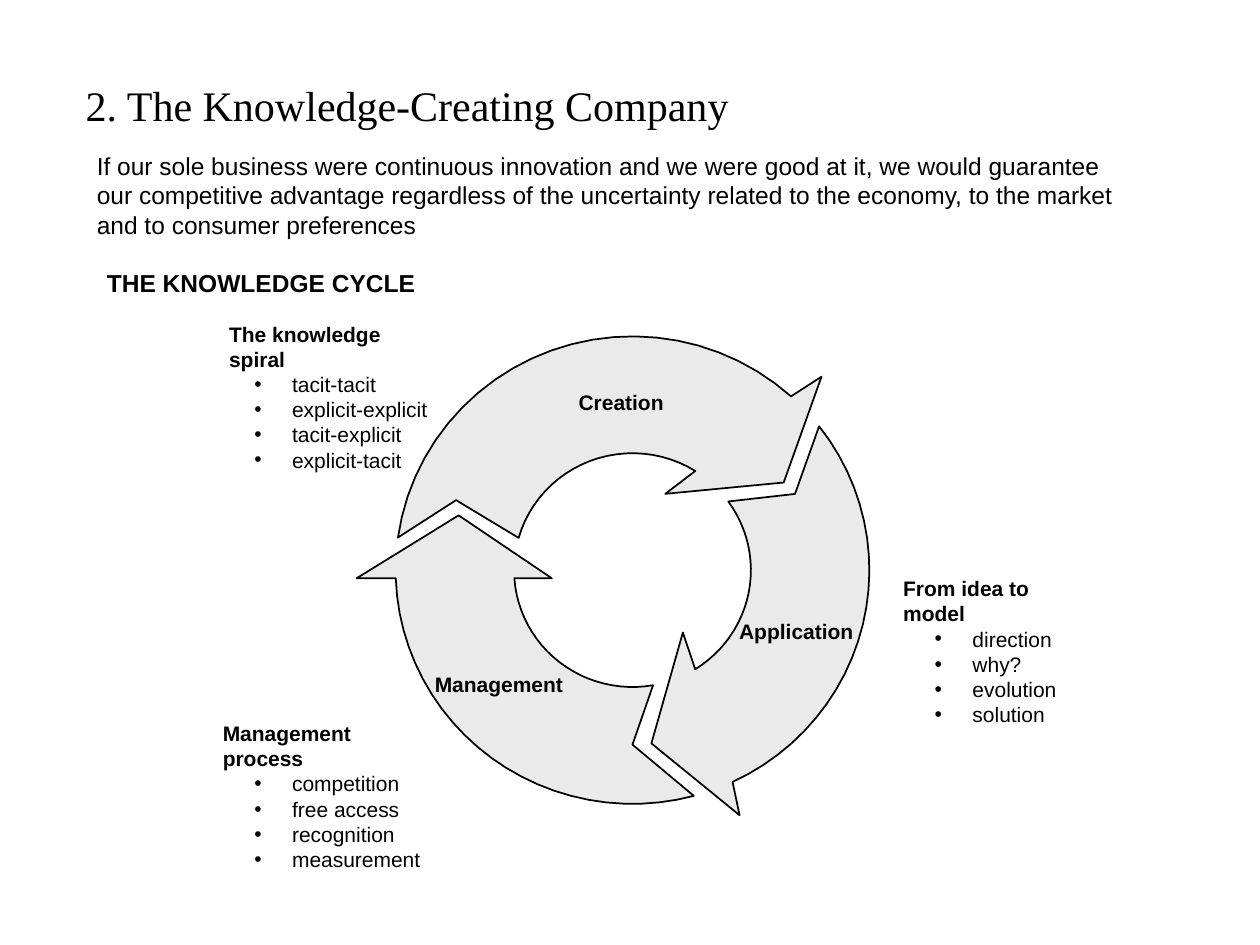
from math import cos, radians, sin

from lxml.etree import SubElement
from pptx import Presentation
from pptx.dml.color import RGBColor
from pptx.enum.text import MSO_ANCHOR as Anchor, MSO_AUTO_SIZE as AutoSize, PP_ALIGN as Align
from pptx.oxml.ns import qn
from pptx.util import Pt

PX = 9144
COLORS = {"ink": "000000", "arrow": "EAEAEA"}
CYCLE_BOX = (314, 267, 376, 371)
INNER_RATIO = 0.5
ARC_STEPS = 24

ARROWS = [
    dict(outer=(312, 188), notch=(48, 130), inner=(196, 302),
         head=[(214, 125), (308, 116), (338, 32)]),
    dict(outer=(178, 75), notch=(188, 324), inner=(80, 176),
         head=[(124, 192), (50, 142), (-31, 192)]),
    dict(outer=(65, -38), notch=(317, 125), inner=(-36, 58),
         head=[(228, 235), (203, 323), (273, 380)]),
]
LABELS = [
    ("Creation", (70, 42, 218, 20)),
    ("Application", (269, 224, 98, 20)),
    ("Management", (28, 266, 108, 20)),
]
LISTS = [
    ((167, 250, 194, 110), "The knowledge spiral", 5,
     ["tacit-tacit", "explicit-explicit", "tacit-explicit", "explicit-tacit"]),
    ((707, 452, 173, 110), "From idea to model", 0,
     ["direction", "why?", "evolution", "solution"]),
    ((167, 567, 190, 110), "Management process", 0,
     ["competition", "free access", "recognition", "measurement"]),
]
INTRO = (
    "If our sole business were continuous innovation and we were good at it, "
    "we would guarantee our competitive advantage regardless of the uncertainty "
    "related to the economy, to the market and to consumer preferences"
)


def rgb(name):
    """Return a named colour."""
    return RGBColor.from_string(COLORS[name])


def place(sp, box):
    """Move a shape to a box in px."""
    sp.left, sp.top, sp.width, sp.height = (v * PX for v in box)


def add_run(p, text, size, bold=False, font="Arial"):
    """Add a formatted run to a paragraph."""
    r = p.add_run()
    r.text = text
    r.font.name, r.font.size, r.font.bold = font, Pt(size), bold
    r.font.color.rgb = rgb("ink")


def add_text_frame(s, box, wrap=True):
    """Add a text box and return its frame."""
    tf = s.shapes.add_textbox(*(v * PX for v in box)).text_frame
    tf.word_wrap = wrap
    return tf


def set_indent(p, left, first=0):
    """Set the left margin and first-line indent of a paragraph."""
    ppr = p._p.get_or_add_pPr()
    ppr.set("marL", str(left * PX))
    ppr.set("indent", str(first * PX))
    return ppr


def set_title(s, box, text):
    """Format and fill the title placeholder."""
    sp = s.shapes.title
    place(sp, box)
    tf = sp.text_frame
    tf.auto_size, tf.word_wrap = AutoSize.NONE, False
    tf.vertical_anchor = Anchor.TOP
    p = tf.paragraphs[0]
    p.alignment = Align.LEFT
    add_run(p, text, 24, font="Times New Roman")


def arc(rx, ry, center, angles):
    """Return points on an elliptical arc between two angles in degrees."""
    start, end = angles
    turns = [radians(start + (end - start) * i / ARC_STEPS) for i in range(ARC_STEPS + 1)]
    return [(center[0] + rx * cos(t), center[1] + ry * sin(t)) for t in turns]


def add_arrow(s, box, outer, notch, inner, head):
    """Draw one curved arrow of the cycle inside its box."""
    x, y, w, h = box
    rx, ry = w / 2, h / 2
    center = (rx, ry)
    points = arc(rx, ry, center, outer) + [notch]
    points += arc(rx * INNER_RATIO, ry * INNER_RATIO, center, inner) + head
    points = [((x + dx) * PX, (y + dy) * PX) for dx, dy in points]
    builder = s.shapes.build_freeform(*points[0])
    builder.add_line_segments(points[1:], close=True)
    sp = builder.convert_to_shape()
    sp.shadow.inherit = False
    sp.fill.solid()
    sp.fill.fore_color.rgb = rgb("arrow")
    sp.line.color.rgb = rgb("ink")
    sp.line.width = Pt(1)


def add_cycle(s, box):
    """Draw the cycle of arrows and their labels."""
    for arrow in ARROWS:
        add_arrow(s, box, **arrow)
    for text, (dx, dy, w, h) in LABELS:
        tf = add_text_frame(s, (box[0] + dx, box[1] + dy, w, h))
        tf.margin_left = tf.margin_right = tf.margin_top = tf.margin_bottom = 0
        tf.vertical_anchor = Anchor.MIDDLE
        p = tf.paragraphs[0]
        p.alignment, p.space_before = Align.CENTER, Pt(3)
        add_run(p, text, 12, bold=True)


def add_list(s, box, heading, heading_indent, items):
    """Add a bold heading with bulleted items below."""
    tf = add_text_frame(s, box, wrap=False)
    p = tf.paragraphs[0]
    set_indent(p, heading_indent)
    add_run(p, heading, 12, bold=True)
    for item in items:
        p = tf.add_paragraph()
        p.level = 1
        ppr = set_indent(p, 55, -30)
        SubElement(ppr, qn("a:buFont")).set("typeface", "Arial")
        SubElement(ppr, qn("a:buChar")).set("char", "•")
        add_run(p, item, 12)


def main():
    """Build and save the slide."""
    prs = Presentation()
    prs.slide_width, prs.slide_height = 1000 * PX, 750 * PX
    s = prs.slides.add_slide(prs.slide_layouts[5])
    set_title(s, (58, 58, 531, 50), "2. The Knowledge-Creating Company")
    add_run(add_text_frame(s, (67, 115, 843, 80)).paragraphs[0], INTRO, 14)
    heading = add_text_frame(s, (75, 208, 265, 34), wrap=False)
    add_run(heading.paragraphs[0], "THE KNOWLEDGE CYCLE", 14, bold=True)
    add_cycle(s, CYCLE_BOX)
    for entry in LISTS:
        add_list(s, *entry)
    prs.save("out.pptx")


if __name__ == "__main__":
    main()
